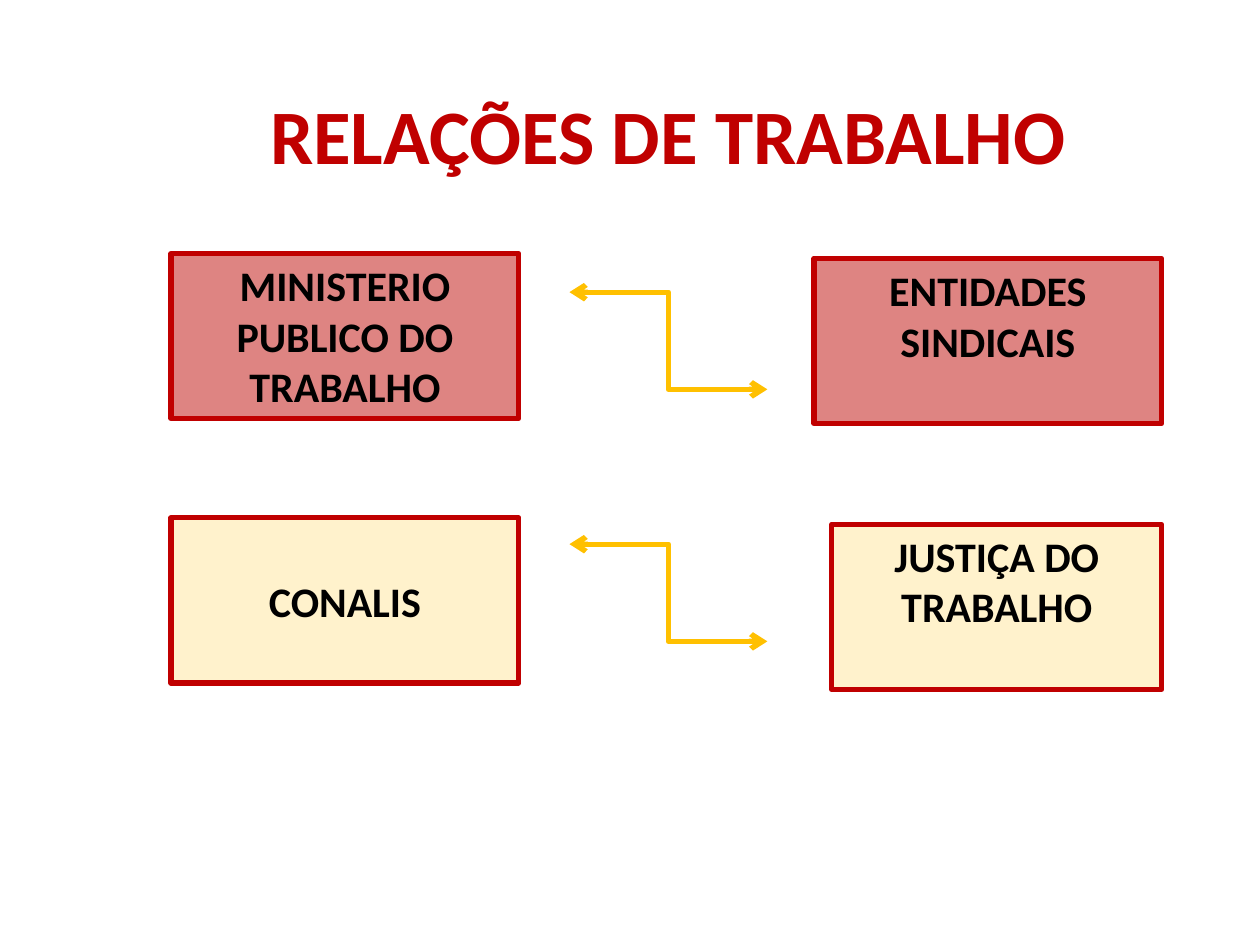
import pptx
import pptx.util
import pptx.dml.color
import pptx.enum.shapes
import pptx.enum.text
import pptx.oxml.ns
from lxml import etree

Cm = pptx.util.Cm
Pt = pptx.util.Pt
RGB = pptx.dml.color.RGBColor
Anchor = pptx.enum.text.MSO_ANCHOR
qn = pptx.oxml.ns.qn

RED = RGB(0xC0, 0x00, 0x00)
ROSE = RGB(0xDE, 0x84, 0x82)
CREAM = RGB(0xFF, 0xF2, 0xCC)
GOLD = RGB(0xFF, 0xC0, 0x00)
BLACK = RGB(0x00, 0x00, 0x00)


class Board:
    font = "Calibri"
    weight = Pt(3)

    def __init__(self, slide):
        self.slide = slide

    def label(self, shape, text, size, color, anchor):
        frame = shape.text_frame
        frame.word_wrap = True
        frame.vertical_anchor = anchor
        frame.text = text
        para = frame.paragraphs[0]
        para.alignment = pptx.enum.text.PP_ALIGN.CENTER
        font = para.runs[0].font
        font.name = self.font
        font.size = Pt(size)
        font.bold = True
        font.color.rgb = color
        return para

    def title(self, text, x, y, w, h):
        box = self.slide.shapes.add_textbox(Cm(x), Cm(y), Cm(w), Cm(h))
        para = self.label(box, text, 44, RED, Anchor.MIDDLE)
        para.line_spacing = 0.9

    def box(self, text, x, y, w, h, fill, anchor=Anchor.TOP):
        kind = pptx.enum.shapes.MSO_SHAPE.RECTANGLE
        shape = self.slide.shapes.add_shape(kind, Cm(x), Cm(y), Cm(w), Cm(h))
        shape.shadow.inherit = False
        shape.fill.solid()
        shape.fill.fore_color.rgb = fill
        shape.line.color.rgb = RED
        shape.line.width = self.weight
        self.label(shape, text, 24, BLACK, anchor)

    def arrow(self, x, y, w, h):
        kind = pptx.enum.shapes.MSO_CONNECTOR.ELBOW
        link = self.slide.shapes.add_connector(
            kind, Cm(x), Cm(y), Cm(x + w), Cm(y + h))
        link.line.color.rgb = GOLD
        link.line.width = self.weight
        # Arrowheads at both ends, no shadow
        props = link.element.spPr
        edge = props.find(qn("a:ln"))
        for end in ("a:headEnd", "a:tailEnd"):
            etree.SubElement(edge, qn(end), type="arrow")
        etree.SubElement(props, qn("a:effectLst"))


def main():
    deck = pptx.Presentation()
    deck.slide_width = Cm(25.4)
    deck.slide_height = Cm(19.05)
    board = Board(deck.slides.add_slide(deck.slide_layouts[6]))

    # Title
    board.title("RELAÇÕES DE TRABALHO", 2.97, 1.27, 21.01, 3.1)

    # Left column
    left, wide, high = 3.45, 7.01, 3.33
    board.box("MINISTERIO PUBLICO DO TRABALHO", left, 5.11, wide, high, ROSE)
    board.box("CONALIS", left, 10.44, wide, high, CREAM, Anchor.MIDDLE)

    # Right column, flush at its right edge
    edge, slim = 23.42, 6.65
    board.box("JUSTIÇA DO TRABALHO", edge - slim, 10.57, slim, high, CREAM)
    board.box("ENTIDADES SINDICAIS", edge - wide, 5.21, wide, high, ROSE)

    # Links between the columns
    for top in (5.89, 10.97):
        board.arrow(11.48, top, 3.99, 1.96)

    deck.save("out.pptx")


if __name__ == "__main__":
    main()
